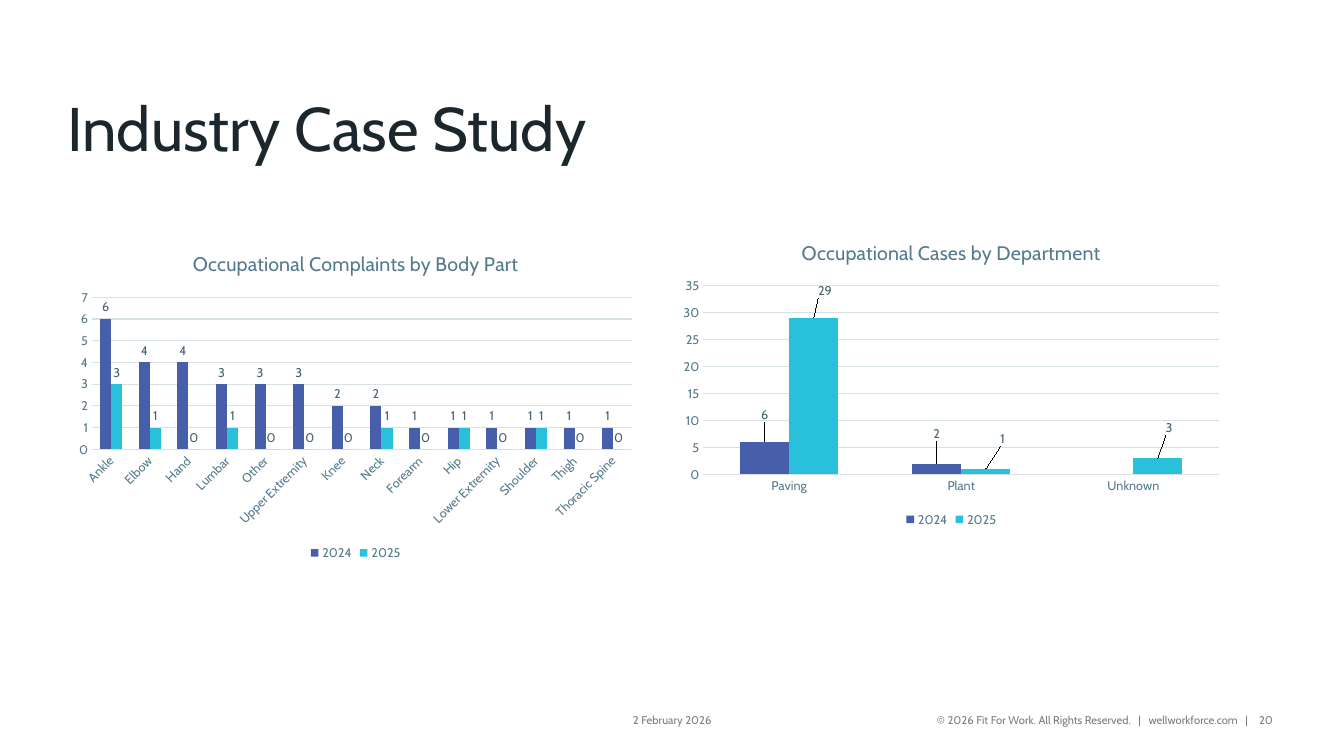
"""Builds the Industry Case Study slide with two complaint charts."""
from lxml import etree
from pptx import Presentation
from pptx.chart.data import CategoryChartData
from pptx.dml.color import RGBColor as RGB
from pptx.enum.chart import (XL_CHART_TYPE as ChartKind, XL_LABEL_POSITION as LabelPos,
                             XL_LEGEND_POSITION as LegendPos, XL_TICK_MARK as Tick)
from pptx.enum.text import MSO_ANCHOR as Anchor, PP_ALIGN as Align
from pptx.oxml.ns import qn
from pptx.util import Cm, Pt

COLORS = {"ink": "1B272D", "footer": "7A7C7D", "axis": "547A8D", "label": "446271",
          "grid": "D6E1E6", "2024": "475EAB", "2025": "28C0DA"}


class CaseStudySlide:
    def __init__(self, slide, face="Cabin"):
        self.slide = slide
        self.face = face

    def color(self, name):
        return RGB.from_string(COLORS[name])

    def style(self, font, size, color):
        font.name = self.face
        font.size = Pt(size)
        font.bold = False
        font.color.rgb = self.color(color)

    def text(self, words, box, size=8, color="footer", align=Align.LEFT,
             anchor=Anchor.MIDDLE, inset=(0, 0.13), spacing=None):
        frame = self.slide.shapes.add_textbox(*map(Cm, box)).text_frame
        frame.word_wrap = True
        frame.vertical_anchor = anchor
        frame.margin_left = frame.margin_right = Cm(inset[0])
        frame.margin_top = frame.margin_bottom = Cm(inset[1])
        paragraph = frame.paragraphs[0]
        paragraph.alignment = align
        paragraph.line_spacing = spacing
        run = paragraph.add_run()
        run.text = words
        self.style(run.font, size, color)

    def columns(self, title, box, categories, values, top, step, tilt=None, shifts=None):
        data = CategoryChartData()
        data.categories = categories
        for year, counts in values.items():
            data.add_series(year, counts)
        chart = self.slide.shapes.add_chart(
            ChartKind.COLUMN_CLUSTERED, *map(Cm, box), data).chart
        self.style(chart.font, 10, "ink")
        heading = chart.chart_title.text_frame
        heading.text = title
        self.style(heading.paragraphs[0].runs[0].font, 14, "axis")
        chart.chart_title.include_in_layout = False
        chart.has_legend = True
        chart.legend.position = LegendPos.BOTTOM
        chart.legend.include_in_layout = False
        self.style(chart.legend.font, 9, "axis")
        self.axes(chart, top, step, tilt)
        plot = chart.plots[0]
        plot.gap_width = 150
        plot.overlap = 0
        plot.vary_by_categories = False
        for series in plot.series:
            self.bars(series, (shifts or {}).get(series.name, []))

    def axes(self, chart, top, step, tilt):
        for axis in (chart.category_axis, chart.value_axis):
            axis.major_tick_mark = axis.minor_tick_mark = Tick.NONE
            axis.format.line.fill.background()
            self.style(axis.tick_labels.font, 9, "axis")
        if tilt:
            body = next(chart.category_axis._element.iter(qn("a:bodyPr")))
            body.set("rot", str(tilt * 60000))
            body.set("vert", "horz")
        counts = chart.value_axis
        counts.minimum_scale, counts.maximum_scale, counts.major_unit = 0, top, step
        grid = counts.major_gridlines.format.line
        grid.color.rgb = self.color("grid")
        grid.width = Pt(0.75)

    def bars(self, series, shifts):
        series.format.fill.solid()
        series.format.fill.fore_color.rgb = self.color(series.name)
        series.invert_if_negative = False
        labels = series.data_labels
        labels.show_value = True
        labels.position = LabelPos.OUTSIDE_END
        self.style(labels.font, 9, "label")
        for index, _ in enumerate(shifts):
            label = series.points[index].data_label
            label.position = LabelPos.OUTSIDE_END
            self.style(label.font, 9, "label")
        for entry, shift in zip(series._element.iter(qn("c:dLbl")), shifts):
            layout = etree.Element(qn("c:layout"))
            manual = etree.SubElement(layout, qn("c:manualLayout"))
            for axis, distance in zip("xy", shift):
                etree.SubElement(manual, qn(f"c:{axis}")).set("val", str(distance))
            entry.insert(1, layout)


def main():
    deck = Presentation()
    deck.slide_width, deck.slide_height = Cm(33.87), Cm(19.05)
    page = CaseStudySlide(deck.slides.add_slide(deck.slide_layouts[6]))

    page.text("Industry Case Study", (1.7, 1.9, 30.48, 2.26), size=44, color="ink",
              anchor=Anchor.BOTTOM, inset=(0, 0), spacing=0.9)
    page.text("2 February 2026", (15.37, 17.88, 3.15, 0.53), align=Align.CENTER,
              inset=(0.25, 0.13))
    page.text("© 2026 Fit For Work. All Rights Reserved.   |   wellworkforce.com   |",
              (19.96, 17.88, 11.51, 0.53), align=Align.RIGHT)
    page.text("20", (31.47, 17.88, 0.61, 0.53), align=Align.RIGHT)

    page.columns(
        "Occupational Complaints by Body Part", (1.7, 5.92, 14.53, 8.31),
        ["Ankle", "Elbow", "Hand", "Lumbar", "Other", "Upper Extremity", "Knee", "Neck",
         "Forearm", "Hip", "Lower Extremity", "Shoulder", "Thigh", "Thoracic Spine"],
        {"2024": [6, 4, 4, 3, 3, 3, 2, 2, 1, 1, 1, 1, 1, 1],
         "2025": [3, 1, 0, 1, 0, 0, 0, 1, 0, 1, 0, 1, 0, 0]},
        top=7, step=1, tilt=-45)
    page.columns(
        "Occupational Cases by Department", (16.94, 5.64, 14.07, 7.75),
        ["Paving", "Plant", "Unknown"],
        {"2024": [6, 2, None], "2025": [29, 1, 3]}, top=35, step=5,
        shifts={"2024": [(0, -0.05), (0, -0.06)],
                "2025": [(0.02, -0.05), (0.03, -0.06), (0.02, -0.06)]})
    deck.save("out.pptx")


if __name__ == "__main__":
    main()
